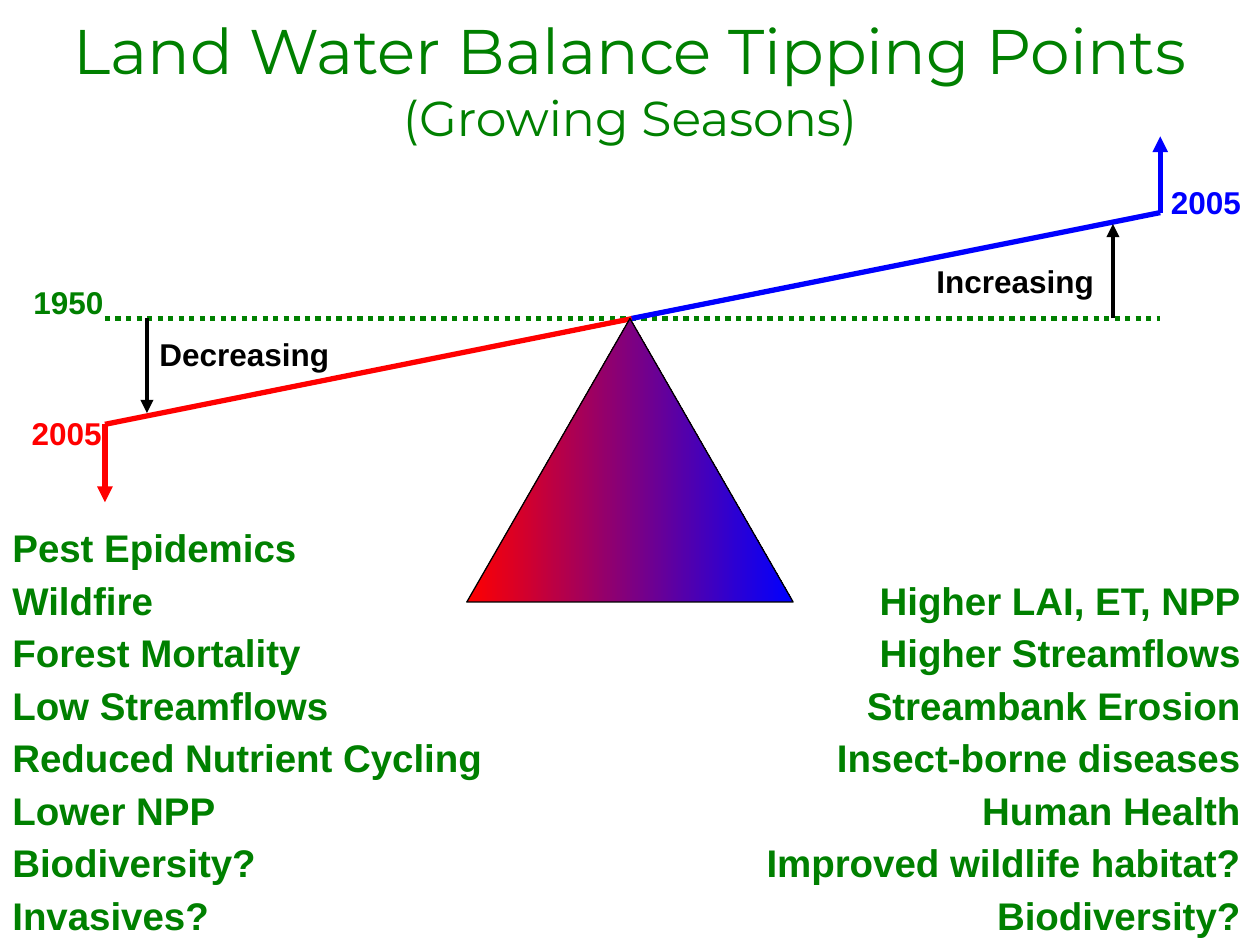
from dataclasses import dataclass

from lxml import etree
from pptx import Presentation
from pptx import util as u
from pptx.dml.color import RGBColor
from pptx.enum import dml, shapes, text
from pptx.oxml.ns import qn


@dataclass(frozen=True)
class Theme:
    green: str = "008000"
    red: str = "FF0000"
    blue: str = "0000FF"
    black: str = "000000"
    title_font: str = "Montserrat"
    body_font: str = "Arial"
    title_size: int = 36
    subtitle_size: int = 28
    list_size: int = 22
    label_size: int = 18


def write_run(paragraph, content, *, font, size, color, bold=False):
    run = paragraph.add_run()
    run.text = content
    run.font.name = font
    run.font.size = u.Pt(size)
    run.font.bold = bold
    run.font.color.rgb = RGBColor.from_string(color)


class SlideBuilder:
    def __init__(self, slide, theme):
        self.slide = slide
        self.theme = theme

    def title(self, heading, subheading, left, top, width, height):
        shape = self.slide.shapes.title
        shape.left, shape.top = u.Pt(left), u.Pt(top)
        shape.width, shape.height = u.Pt(width), u.Pt(height)
        frame = shape.text_frame
        frame.auto_size = text.MSO_AUTO_SIZE.NONE
        frame.vertical_anchor = text.MSO_ANCHOR.MIDDLE
        paragraph = frame.paragraphs[0]
        paragraph.alignment = text.PP_ALIGN.CENTER
        style = {"font": self.theme.title_font, "color": self.theme.green}
        write_run(paragraph, heading, size=self.theme.title_size, **style)
        paragraph.add_line_break()
        write_run(paragraph, subheading, size=self.theme.subtitle_size, **style)

    def line(self, start, end, color, weight=3, dash=None, arrow=False):
        connector = self.slide.shapes.add_connector(
            shapes.MSO_CONNECTOR.STRAIGHT, *map(u.Pt, (*start, *end)))
        connector.line.color.rgb = RGBColor.from_string(color)
        connector.line.width = u.Pt(weight)
        if dash:
            connector.line.dash_style = dash
        if arrow:
            outline = connector.line._get_or_add_ln()
            etree.SubElement(outline, qn("a:tailEnd"), type="triangle")
        etree.SubElement(connector._element.spPr, qn("a:effectLst"))

    def triangle(self, left, top, width, height, colors):
        shape = self.slide.shapes.add_shape(
            shapes.MSO_SHAPE.ISOSCELES_TRIANGLE, *map(u.Pt, (left, top, width, height)))
        shape.shadow.inherit = False
        shape.fill.gradient()
        shape.fill.gradient_angle = 0
        for stop, color in zip(shape.fill.gradient_stops, colors):
            stop.color.rgb = RGBColor.from_string(color)
        shape.line.color.rgb = RGBColor.from_string(self.theme.black)
        shape.line.width = u.Pt(0.75)

    def label(self, content, left, top, width, color, size=None, height=29,
              align=text.PP_ALIGN.LEFT):
        shape = self.slide.shapes.add_textbox(*map(u.Pt, (left, top, width, height)))
        frame = shape.text_frame
        frame.word_wrap = False
        frame.auto_size = text.MSO_AUTO_SIZE.SHAPE_TO_FIT_TEXT
        paragraph = frame.paragraphs[0]
        paragraph.alignment = align
        write_run(paragraph, content, font=self.theme.body_font,
                  size=size or self.theme.label_size, color=color, bold=True)

    def effects(self, items, top, left=0, right=None, pitch=30):
        for row, (content, width) in enumerate(items):
            align = text.PP_ALIGN.LEFT if right is None else text.PP_ALIGN.RIGHT
            edge = left if right is None else right - width
            self.label(content, edge, top + row * pitch, width, self.theme.green,
                       size=self.theme.list_size, height=34, align=align)


def main():
    presentation = Presentation()
    presentation.slide_width, presentation.slide_height = u.Pt(720), u.Pt(540)
    slide = presentation.slides.add_slide(presentation.slide_layouts[5])
    theme = Theme()
    builder = SlideBuilder(slide, theme)

    builder.title("Land Water Balance Tipping Points", "(Growing Seasons)", 0, 6, 720, 78)

    level, tilt = 182, 60.5
    left_end, right_end, pivot = 60, 663, 360
    low, high = level + tilt, level - tilt
    builder.line((left_end, level), (right_end, level), theme.green,
                 dash=dml.MSO_LINE.ROUND_DOT)
    builder.line((left_end, low), (pivot + 1.5, level), theme.red)
    builder.line((pivot + 1, level), (right_end, high), theme.blue)
    builder.line((left_end, low), (left_end, low + 44.5), theme.red, arrow=True)
    builder.line((right_end, high), (right_end, high - 43.5), theme.blue, arrow=True)

    base = 186.5
    builder.triangle(pivot - base / 2, level, base, 162, (theme.red, theme.blue))

    for x, shift in ((84, 54), (636, -54)):
        builder.line((x, level), (x, level + shift), theme.black, weight=2.5, arrow=True)

    for content, left, top, width, color in (
        ("1950", 12, 158, 55, theme.green),
        ("2005", 11, 233, 55, theme.red),
        ("2005", 662, 101, 55, theme.blue),
        ("Decreasing", 84, 188, 112, theme.black),
        ("Increasing", 528, 146, 105, theme.black),
    ):
        builder.label(content, left, top, width, color)

    builder.effects((
        ("Pest Epidemics", 178),
        ("Wildfire", 96),
        ("Forest Mortality", 181),
        ("Low Streamflows", 197),
        ("Reduced Nutrient Cycling", 285),
        ("Lower NPP", 132),
        ("Biodiversity?", 155),
        ("Invasives?", 128),
    ), top=296)
    builder.effects((
        ("Higher LAI, ET, NPP", 225),
        ("Higher Streamflows", 222),
        ("Streambank Erosion", 230),
        ("Insect-borne diseases", 247),
        ("Human Health", 164),
        ("Improved wildlife habitat?", 288),
        ("Biodiversity?", 155),
    ), top=326, right=716)

    presentation.save("out.pptx")


if __name__ == "__main__":
    main()
